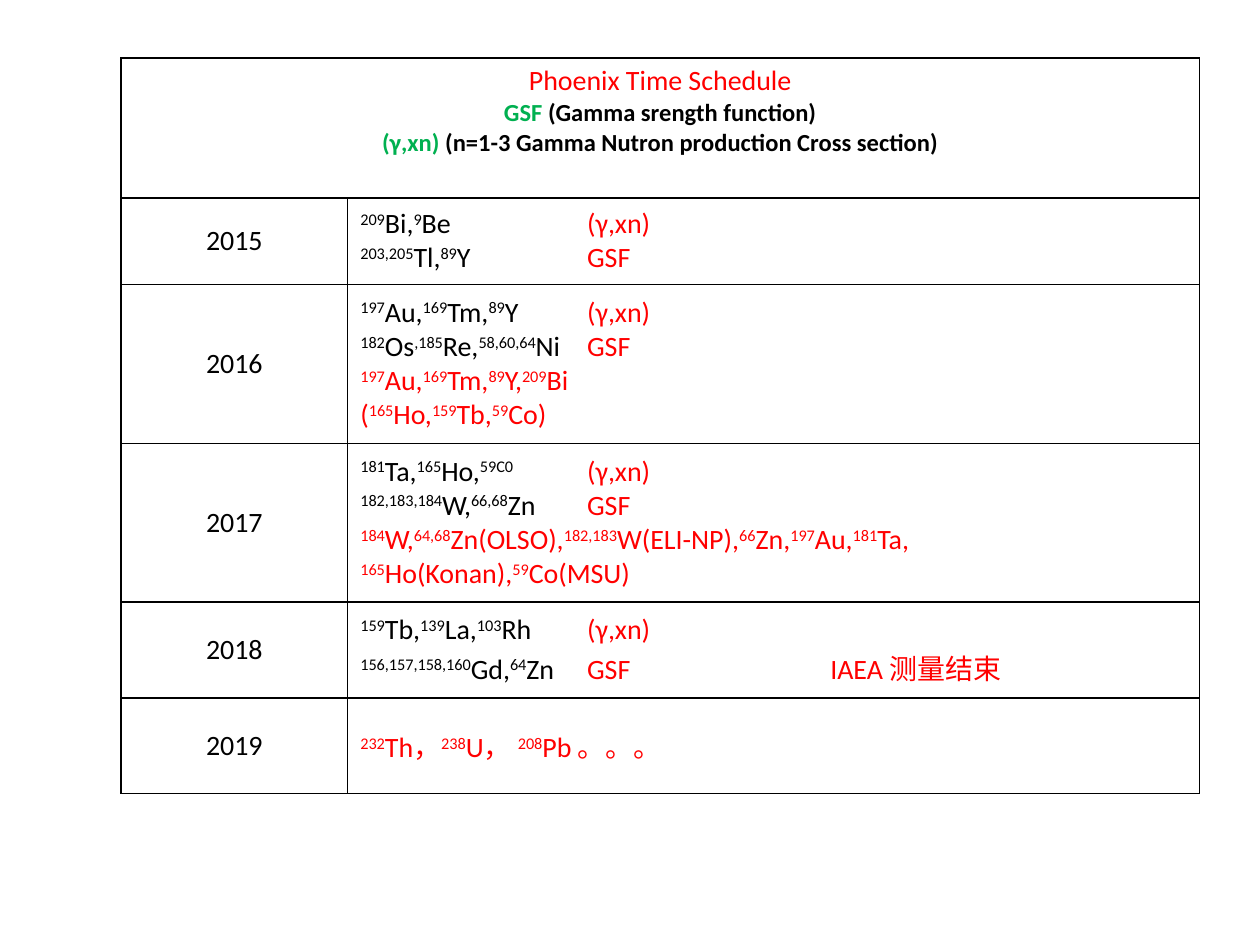
import pptx
import pptx.dml.color
import pptx.enum.text
import pptx.oxml
import pptx.oxml.ns
import pptx.util

Inches = pptx.util.Inches
ALIGN = pptx.enum.text.PP_ALIGN
ANCHOR = pptx.enum.text.MSO_ANCHOR
BLACK, RED, GREEN = "000000", "FF0000", "00B050"
TAB_STOPS = (1.8, 3.73)
COLUMN_WIDTHS = (1.8, 6.76)
ROW_HEIGHTS = (1.11, 0.69, 1.26, 1.26, 0.76, 0.76)

HEADING = [
    ([("Phoenix Time Schedule", RED)], {"size": 16, "bold": False}),
    ([("GSF ", GREEN), ("(Gamma srength function)", BLACK)], {"size": 14, "bold": True}),
    ([("(γ,xn) ", GREEN), ("(n=1-3 Gamma Nutron production Cross section)", BLACK)],
     {"size": 14, "bold": True}),
]

# Carets enclose superscripts.
SCHEDULE = {
    "2015": [
        [("^209^Bi,^9^Be", BLACK), ("\t(γ,xn)", RED)],
        [("^203,205^Tl,^89^Y", BLACK), ("\tGSF", RED)],
    ],
    "2016": [
        [("^197^Au,^169^Tm,^89^Y", BLACK), ("\t(γ,xn)", RED)],
        [("^182^Os^,185^Re,^58,60,64^Ni", BLACK), ("\tGSF", RED)],
        [("^197^Au,^169^Tm,^89^Y,^209^Bi", RED)],
        [("(^165^Ho,^159^Tb,^59^Co)", RED)],
    ],
    "2017": [
        [("^181^Ta,^165^Ho,^59C0^", BLACK), ("\t(γ,xn)", RED)],
        [("^182,183,184^W,^66,68^Zn", BLACK), ("\tGSF", RED)],
        [("^184^W,^64,68^Zn(OLSO),^182,183^W(ELI-NP),^66^Zn,^197^Au,^181^Ta,", RED)],
        [("^165^Ho(Konan),^59^Co(MSU)", RED)],
    ],
    "2018": [
        [("^159^Tb,^139^La,^103^Rh", BLACK), ("\t(γ,xn)", RED)],
        [("^156,157,158,160^Gd,^64^Zn", BLACK), ("\tGSF\tIAEA 测量结束", RED)],
    ],
    "2019": [[("^232^Th，^238^U， ^208^Pb 。。。", RED)]],
}


def color(value):
    return pptx.dml.color.RGBColor.from_string(value)


def add_tabs(para):
    stops = "".join(f'<a:tab pos="{Inches(stop)}" algn="l"/>' for stop in TAB_STOPS)
    namespace = pptx.oxml.ns.nsdecls("a")
    para._p.get_or_add_pPr().append(
        pptx.oxml.parse_xml(f"<a:tabLst {namespace}>{stops}</a:tabLst>"))


def write_line(para, pieces, size=16, bold=False):
    style = {"name": "Calibri", "size": pptx.util.Pt(size), "bold": bold}
    if any("\t" in text for text, _ in pieces):
        add_tabs(para)
    for text, shade in pieces:
        for index, part in enumerate(text.split("^")):
            if not part:
                continue
            span = para.add_run()
            span.text = part
            for name, value in style.items():
                setattr(span.font, name, value)
            span.font.color.rgb = color(shade)
            if index % 2:
                span._r.get_or_add_rPr().set("baseline", "30000")


def write_cell(cell, lines, align, anchor=ANCHOR.MIDDLE):
    cell.vertical_anchor = anchor
    frame = cell.text_frame
    for index, (pieces, style) in enumerate(lines):
        para = frame.add_paragraph() if index else frame.paragraphs[0]
        para.alignment = align
        write_line(para, pieces, **style)


def style_cell(cell):
    properties = cell._tc.get_or_add_tcPr()
    namespace = pptx.oxml.ns.nsdecls("a")
    for side in ("lnL", "lnR", "lnT", "lnB"):
        properties.append(pptx.oxml.parse_xml(
            f'<a:{side} {namespace} w="{pptx.util.Pt(1)}"><a:solidFill>'
            f'<a:srgbClr val="{BLACK}"/></a:solidFill></a:{side}>'))
    cell.fill.background()


def add_schedule(page, left, top, width, height):
    table = page.shapes.add_table(
        len(ROW_HEIGHTS), len(COLUMN_WIDTHS), left, top, width, height).table
    table.first_row = table.horz_banding = False
    for column, size in zip(table.columns, COLUMN_WIDTHS):
        column.width = Inches(size)
    for row, size in zip(table.rows, ROW_HEIGHTS):
        row.height = Inches(size)
        for cell in row.cells:
            style_cell(cell)

    heading = table.cell(0, 0)
    heading.merge(table.cell(0, 1))
    write_cell(heading, HEADING, ALIGN.CENTER, ANCHOR.TOP)
    for row, (year, lines) in enumerate(SCHEDULE.items(), start=1):
        write_cell(table.cell(row, 0), [([(year, BLACK)], {})], ALIGN.CENTER)
        write_cell(table.cell(row, 1), [(line, {}) for line in lines], ALIGN.LEFT)


def main():
    deck = pptx.Presentation()
    deck.slide_width, deck.slide_height = Inches(10), Inches(7.5)
    page = deck.slides.add_slide(deck.slide_layouts[6])
    add_schedule(page, Inches(0.96), Inches(0.46), Inches(8.56), Inches(5.84))
    deck.save("out.pptx")


if __name__ == "__main__":
    main()
